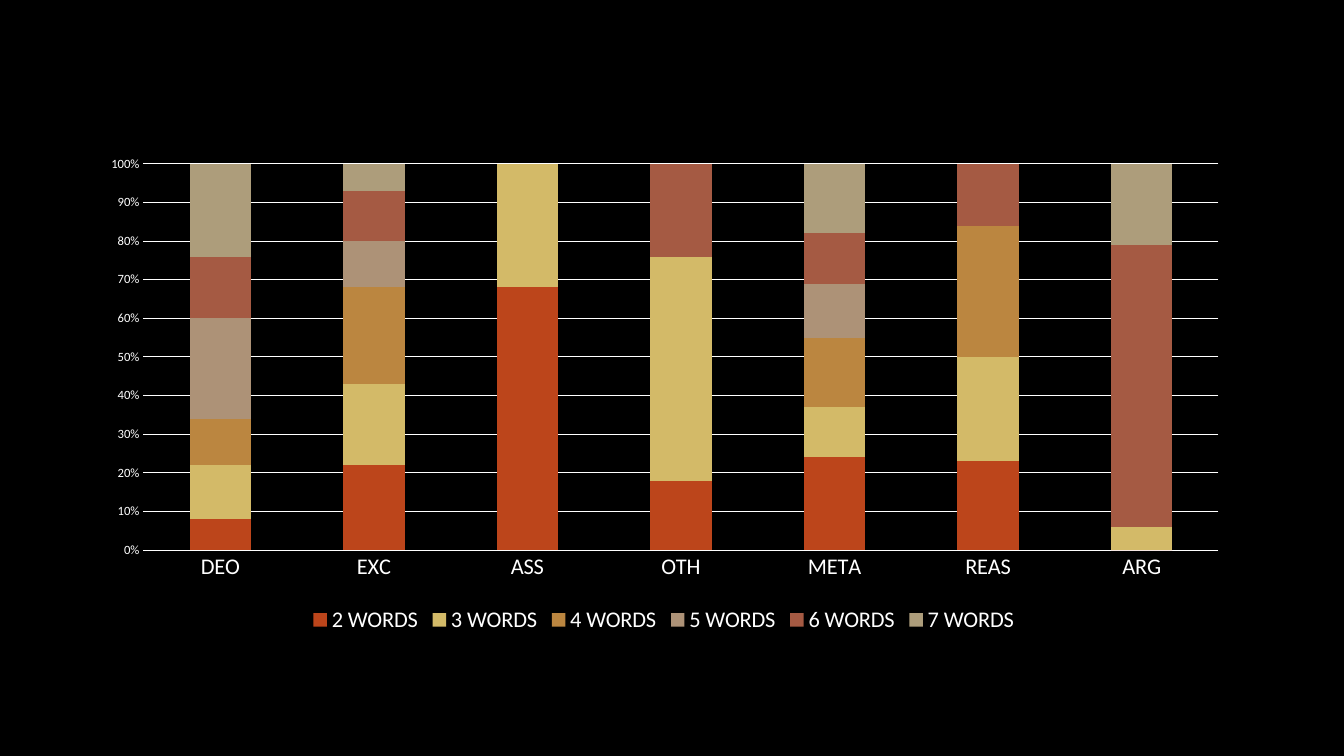
from lxml import etree
from pptx import Presentation
from pptx.chart.data import CategoryChartData
from pptx.dml.color import RGBColor
from pptx.enum.chart import XL_CHART_TYPE, XL_LEGEND_POSITION, XL_TICK_MARK
from pptx.oxml.ns import qn
from pptx.util import Cm, Pt

STACKED = XL_CHART_TYPE.COLUMN_STACKED_100
BOTTOM = XL_LEGEND_POSITION.BOTTOM
NO_TICK = XL_TICK_MARK.NONE

FONT = "Calibri"
BLACK, WHITE = "000000", "FFFFFF"

CATEGORIES = ["DEO", "EXC", "ASS", "OTH", "META", "REAS", "ARG"]
SERIES = [  # name, colour, percentages by category
    ("2 WORDS", "BC451B", (8, 22, 68, 18, 24, 23, 0)),
    ("3 WORDS", "D3BA68", (14, 21, 32, 58, 13, 27, 6)),
    ("4 WORDS", "BB8640", (12, 25, 0, 0, 18, 34, 0)),
    ("5 WORDS", "AD9277", (26, 12, 0, 0, 14, 0, 0)),
    ("6 WORDS", "A55A43", (16, 13, 0, 24, 13, 16, 73)),
    ("7 WORDS", "AD9D7B", (24, 7, 0, 0, 18, 0, 21)),
]
CHART_BOX = (Cm(2.16), Cm(3.76), Cm(29.13), Cm(12.32))
PLOT_BOX = {"x": 0.05, "y": 0.03, "w": 0.93, "h": 0.79}  # shares of the chart


def fill(target, color):
    target.fill.solid()
    target.fill.fore_color.rgb = RGBColor.from_string(color)


def style_font(font, size, color=WHITE):
    font.name = FONT
    font.size = Pt(size)
    font.color.rgb = RGBColor.from_string(color)


def style_line(line, color=WHITE, width=0.75):
    line.color.rgb = RGBColor.from_string(color)
    line.width = Pt(width)


def place_plot(chart, box):
    """Fix the inner plot area at shares of the chart size."""
    plot_area = chart.plots[0]._element.getparent()
    for old in plot_area.findall(qn("c:layout")):
        plot_area.remove(old)
    layout = etree.Element(qn("c:layout"))
    manual = etree.SubElement(layout, qn("c:manualLayout"))
    settings = [("layoutTarget", "inner"), ("xMode", "edge"), ("yMode", "edge")]
    for tag, value in settings + list(box.items()):
        etree.SubElement(manual, qn(f"c:{tag}")).set("val", str(value))
    plot_area.insert(0, layout)


prs = Presentation()
prs.slide_width, prs.slide_height = Cm(33.87), Cm(19.05)
slide = prs.slides.add_slide(prs.slide_layouts[6])
fill(slide.background, BLACK)

data = CategoryChartData()
data.categories = CATEGORIES
for name, _, values in SERIES:
    data.add_series(name, values)

chart = slide.shapes.add_chart(STACKED, *CHART_BOX, data).chart
style_font(chart.font, 10)
chart.has_title = False
place_plot(chart, PLOT_BOX)

plot = chart.plots[0]
plot.gap_width, plot.overlap = 150, 100
plot.vary_by_categories = False
for series, (_, color, _) in zip(plot.series, SERIES):
    fill(series.format, color)

for axis, size in ((chart.category_axis, 16), (chart.value_axis, 9)):
    axis.major_tick_mark = axis.minor_tick_mark = NO_TICK
    style_font(axis.tick_labels.font, size)
style_line(chart.category_axis.format.line)

value_axis = chart.value_axis
value_axis.minimum_scale, value_axis.maximum_scale = 0, 1
value_axis.major_unit = 0.1
value_axis.format.line.fill.background()
style_line(value_axis.major_gridlines.format.line)
value_axis.tick_labels.number_format = "0%"
value_axis.tick_labels.number_format_is_linked = False

chart.has_legend = True
chart.legend.position = BOTTOM
chart.legend.include_in_layout = False
style_font(chart.legend.font, 16)

prs.save("out.pptx")
